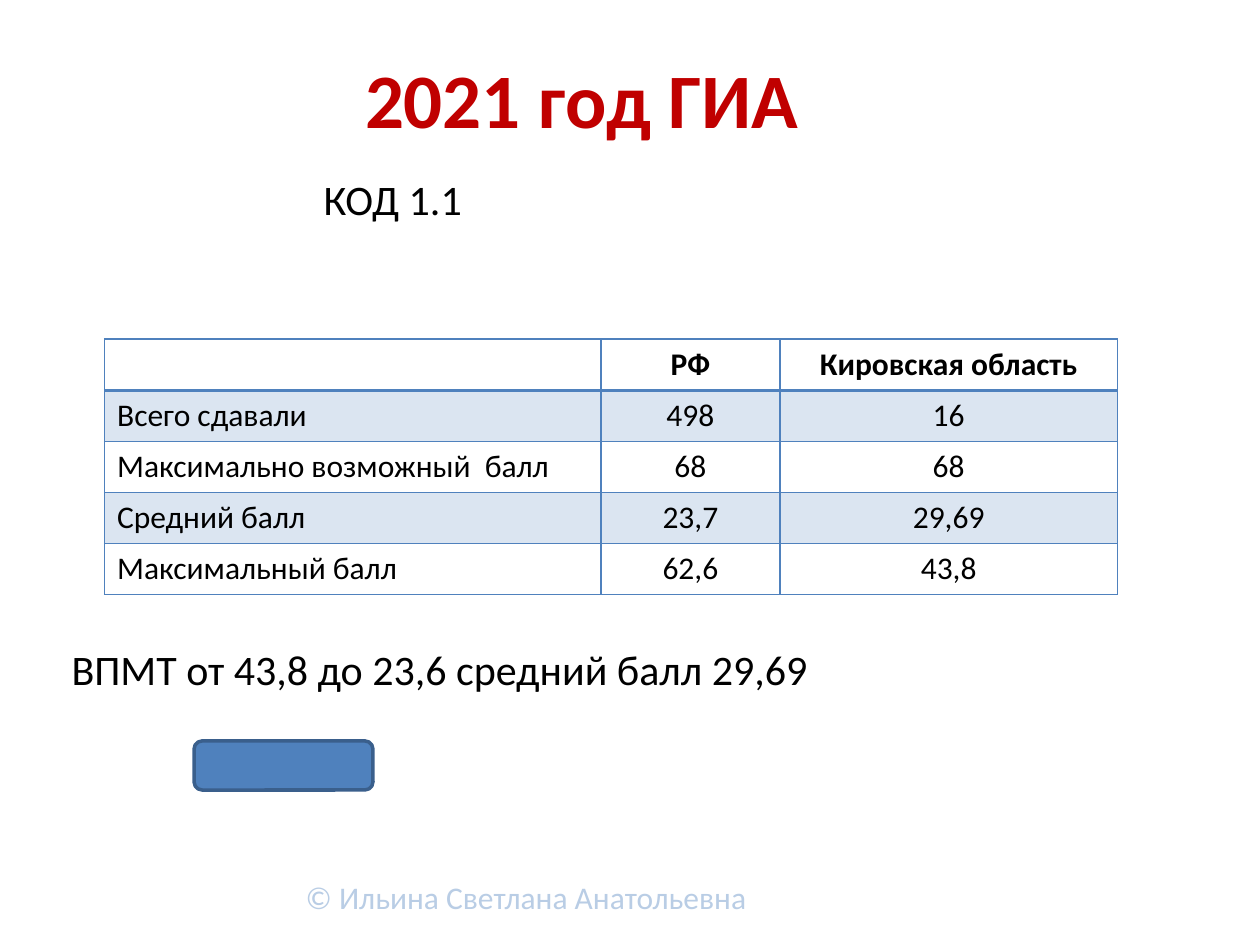
from dataclasses import dataclass

from lxml import etree
from pptx import Presentation
from pptx.dml.color import RGBColor
from pptx.enum.shapes import MSO_SHAPE
from pptx.enum.text import MSO_ANCHOR, PP_ALIGN
from pptx.oxml.ns import qn
from pptx.util import Inches, Pt

LEFT, CENTER = PP_ALIGN.LEFT, PP_ALIGN.CENTER
TOP, MIDDLE = MSO_ANCHOR.TOP, MSO_ANCHOR.MIDDLE
ROUNDED = MSO_SHAPE.ROUNDED_RECTANGLE
TITLE_ONLY = 5


@dataclass(frozen=True)
class Theme:
    font: str = "Calibri"
    title_size: int = 44
    body_size: int = 24
    small_size: int = 18
    title: str = "C00000"
    text: str = "000000"
    accent: str = "4F81BD"
    accent_dark: str = "3A5F8C"
    credit: str = "B9CDE5"
    band_opacity: int = 20


THEME = Theme()
COLUMN_WIDTHS = (3.94, 1.42, 2.68)
ROWS = (
    ("", "РФ", "Кировская область"),
    ("Всего сдавали", "498", "16"),
    ("Максимально возможный  балл", "68", "68"),
    ("Средний балл", "23,7", "29,69"),
    ("Максимальный балл", "62,6", "43,8"),
)


def inches(box):
    return [Inches(length) for length in box]


def write(text_frame, text, size, color, align=LEFT, bold=False):
    paragraph = text_frame.paragraphs[0]
    paragraph.text = text
    paragraph.alignment = align
    font = paragraph.font
    font.name, font.size, font.bold = THEME.font, Pt(size), bold
    font.color.rgb = RGBColor.from_string(color)


def place_title(slide, box, text):
    title = slide.shapes.title
    title.left, title.top, title.width, title.height = inches(box)
    title.text_frame.vertical_anchor = MIDDLE
    write(title.text_frame, text, THEME.title_size, THEME.title, CENTER, True)


def add_text(slide, box, text, size, color, align=LEFT, anchor=TOP):
    text_frame = slide.shapes.add_textbox(*inches(box)).text_frame
    text_frame.word_wrap = True
    text_frame.vertical_anchor = anchor
    write(text_frame, text, size, color, align)


def add_button(slide, box):
    button = slide.shapes.add_shape(ROUNDED, *inches(box))
    button.shadow.inherit = False
    button.fill.solid()
    button.fill.fore_color.rgb = RGBColor.from_string(THEME.accent)
    button.line.color.rgb = RGBColor.from_string(THEME.accent_dark)
    button.line.width = Pt(2)


def add_borders(cell, widths):
    """Draw the left, right, top and bottom lines, widths in points."""
    properties = cell._tc.get_or_add_tcPr()
    for side, width in zip("LRTB", widths):
        line = etree.SubElement(properties, qn(f"a:ln{side}"), w=str(Pt(width)))
        fill = etree.SubElement(line, qn("a:solidFill"))
        etree.SubElement(fill, qn("a:srgbClr"), val=THEME.accent)


def fill_cell(cell, banded):
    if not banded:
        cell.fill.background()
        return
    cell.fill.solid()
    cell.fill.fore_color.rgb = RGBColor.from_string(THEME.accent)
    color = cell._tc.tcPr.find(f"{qn('a:solidFill')}/{qn('a:srgbClr')}")
    etree.SubElement(color, qn("a:alpha"), val=str(THEME.band_opacity * 1000))


def add_score_table(slide, box):
    table = slide.shapes.add_table(len(ROWS), len(COLUMN_WIDTHS), *inches(box)).table
    table.first_row = table.horz_banding = False
    for column, width in zip(table.columns, COLUMN_WIDTHS):
        column.width = Inches(width)
    for row_index, row in enumerate(ROWS):
        top_width = 2 if row_index == 1 else 1
        bottom_width = 2 if row_index == 0 else 1
        for column_index, text in enumerate(row):
            cell = table.cell(row_index, column_index)
            cell.vertical_anchor = TOP
            align = CENTER if column_index else LEFT
            write(cell.text_frame, text, THEME.small_size, THEME.text,
                  align, row_index == 0)
            add_borders(cell, (1, 1, top_width, bottom_width))
            fill_cell(cell, row_index % 2 == 1)


def build_results_slide(presentation):
    slide = presentation.slides.add_slide(presentation.slide_layouts[TITLE_ONLY])
    add_text(slide, (1.95, 6.88, 4.45, 0.47), "© Ильина Светлана Анатольевна",
             THEME.small_size, THEME.credit, CENTER, MIDDLE)
    place_title(slide, (1.64, 0.3, 5.96, 0.95), "2021 год ГИА")
    add_text(slide, (2.47, 1.33, 7, 0.5), "КОД 1.1", THEME.body_size, THEME.text)
    add_text(slide, (0.47, 5.06, 9, 0.5), "ВПМТ от 43,8 до 23,6 средний балл 29,69",
             THEME.body_size, THEME.text)
    add_button(slide, (1.54, 5.88, 1.42, 0.39))
    add_score_table(slide, (0.83, 2.69, sum(COLUMN_WIDTHS), 2.03))


def main():
    presentation = Presentation()
    presentation.slide_width, presentation.slide_height = Inches(10), Inches(7.5)
    build_results_slide(presentation)
    presentation.save("out.pptx")


if __name__ == "__main__":
    main()
